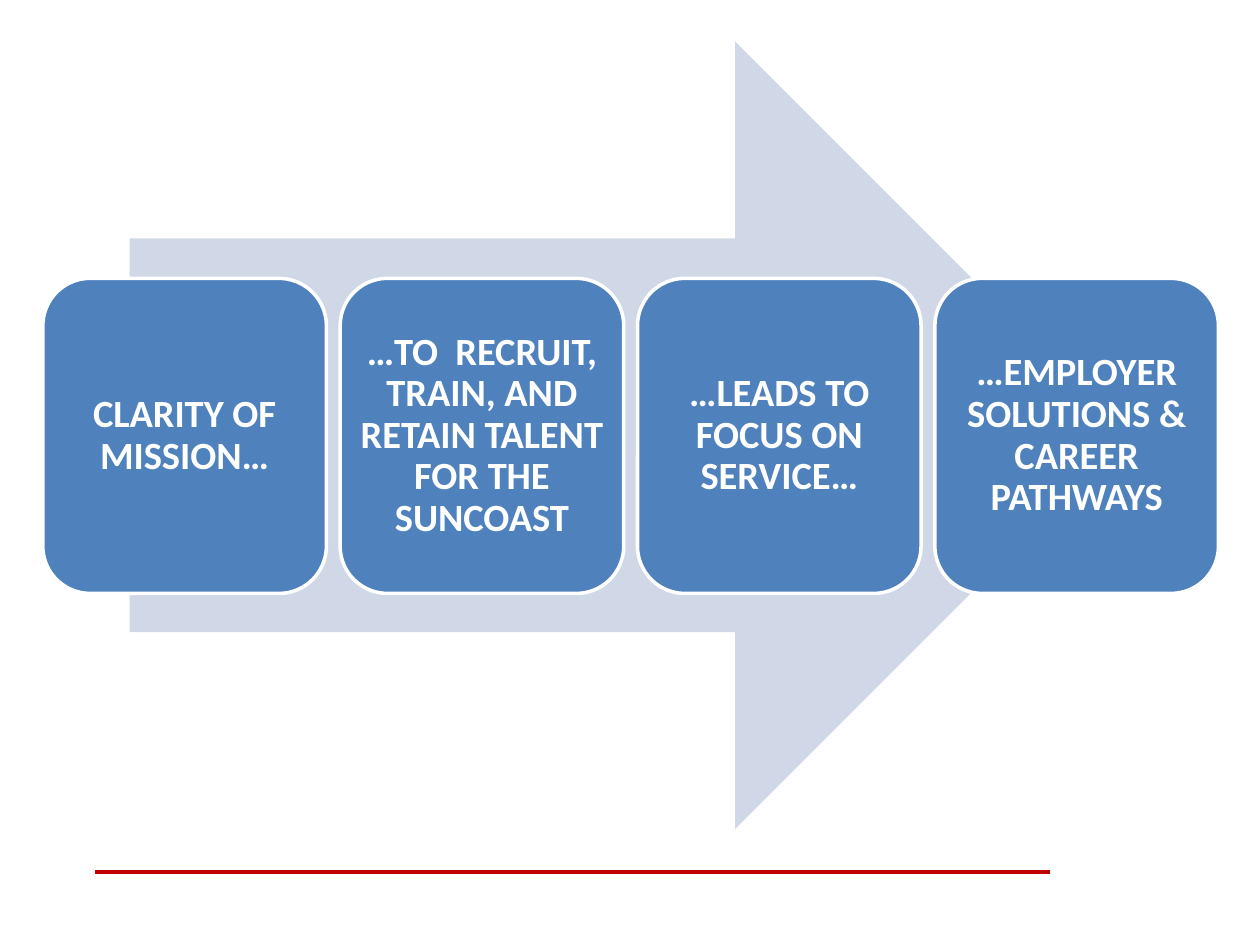
from lxml import etree
from pptx import Presentation
from pptx.dml.color import RGBColor
from pptx.enum.shapes import MSO_CONNECTOR, MSO_SHAPE
from pptx.enum.text import MSO_ANCHOR, PP_ALIGN
from pptx.oxml.ns import qn
from pptx.util import Inches, Pt

STRAIGHT = MSO_CONNECTOR.STRAIGHT
RIGHT_ARROW = MSO_SHAPE.RIGHT_ARROW
ROUNDED = MSO_SHAPE.ROUNDED_RECTANGLE
MIDDLE = MSO_ANCHOR.MIDDLE
CENTER = PP_ALIGN.CENTER

STEPS = [
    "CLARITY OF MISSION…",
    "…TO  RECRUIT, TRAIN, AND RETAIN TALENT FOR THE SUNCOAST",
    "…LEADS TO FOCUS ON SERVICE…",
    "…EMPLOYER SOLUTIONS & CAREER PATHWAYS",
]
STEP_LEFT, STEP_TOP = 0.34, 2.21
STEP_WIDTH, STEP_HEIGHT = 2.25, 2.5
STEP_GAP = 0.11


def color(value):
    return RGBColor.from_string(value)


def add_shape(page, kind, left, top, width, height, fill, line=None):
    shape = page.shapes.add_shape(
        kind, Inches(left), Inches(top), Inches(width), Inches(height)
    )
    shape.shadow.inherit = False
    shape.fill.solid()
    shape.fill.fore_color.rgb = color(fill)
    if line:
        shape.line.color.rgb = color(line)
        shape.line.width = Pt(2)
    else:
        shape.line.fill.background()
    return shape


def write_text(shape, text, *, size, ink, font="Calibri", bold=True, inset=0):
    frame = shape.text_frame
    frame.word_wrap = True
    frame.vertical_anchor = MIDDLE
    frame.margin_left = frame.margin_right = Inches(inset)
    frame.margin_top = frame.margin_bottom = Inches(inset)
    para = frame.paragraphs[0]
    para.alignment = CENTER
    para.line_spacing = 0.9
    span = para.add_run()
    span.text = text
    span.font.name = font
    span.font.size = Pt(size)
    span.font.bold = bold
    span.font.color.rgb = color(ink)


def add_rule(page, left, right, height, ink):
    rule = page.shapes.add_connector(
        STRAIGHT, Inches(left), Inches(height), Inches(right), Inches(height)
    )
    rule.line.color.rgb = color(ink)
    rule.line.width = Pt(2.25)
    etree.SubElement(rule._element.spPr, qn("a:effectLst"))


def main():
    deck = Presentation()
    deck.slide_width, deck.slide_height = Inches(10), Inches(7.5)
    page = deck.slides.add_slide(deck.slide_layouts[6])

    add_rule(page, 0.75, 8.33, 6.92, "C00000")
    add_shape(page, RIGHT_ARROW, 1.03, 0.33, 7.93, 6.25, "D0D8E8")
    for index, text in enumerate(STEPS):
        left = STEP_LEFT + index * (STEP_WIDTH + STEP_GAP)
        box = add_shape(
            page, ROUNDED, left, STEP_TOP, STEP_WIDTH, STEP_HEIGHT, "4F81BD", "FFFFFF"
        )
        write_text(box, text, size=22, ink="FFFFFF")

    deck.save("out.pptx")


if __name__ == "__main__":
    main()
